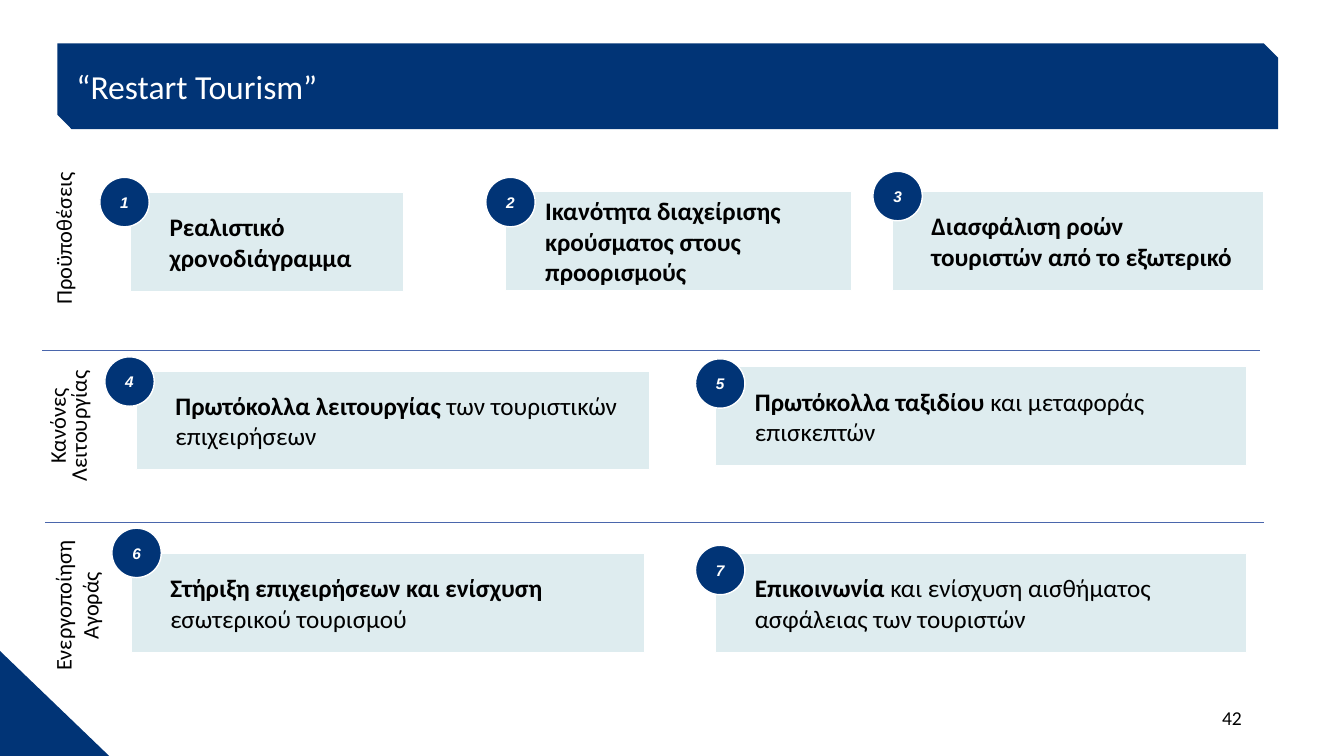
import pptx
import pptx.util
import pptx.dml.color
import pptx.enum.shapes
import pptx.enum.text
import pptx.oxml.ns
import lxml.etree

Pt = pptx.util.Pt
hue = pptx.dml.color.RGBColor.from_string
Kind = pptx.enum.shapes.MSO_SHAPE
Align = pptx.enum.text.PP_ALIGN
Mid = pptx.enum.text.MSO_ANCHOR.MIDDLE
qn = pptx.oxml.ns.qn
NAVY, PALE, WHITE, BLACK, BLUE = "013476", "DEECEF", "FFFFFF", "000000", "4A66AC"

deck = pptx.Presentation()
deck.slide_width, deck.slide_height = Pt(960), Pt(540)
slide = deck.slides.add_slide(deck.slide_layouts[6])
shapes = slide.shapes


def draw(kind, box, fill, edge=0):
    shape = shapes.add_shape(kind, *map(Pt, box))
    shape.shadow.inherit = False
    shape.fill.solid()
    shape.fill.fore_color.rgb = hue(fill)
    if edge:
        shape.line.color.rgb = hue(WHITE)
        shape.line.width = Pt(edge)
    else:
        shape.line.fill.background()
    return shape


def write(shape, lines, size, shade, frame, align=Align.LEFT, name="Calibri", italic=False):
    text = shape.text_frame
    for key, value in frame.items():
        setattr(text, key, value)
    for num, runs in enumerate(lines):
        para = text.add_paragraph() if num else text.paragraphs[0]
        para.alignment = align
        for words, bold in runs:
            run = para.add_run()
            run.text = words
            style = {"size": Pt(size), "name": name, "bold": bold, "italic": italic}
            for key, value in style.items():
                setattr(run.font, key, value)
            run.font.color.rgb = hue(shade)
    return text


# Corner and title bar
draw(Kind.RIGHT_TRIANGLE, (0, 465, 78, 75), NAVY)
bar = draw(Kind.SNIP_2_DIAG_RECTANGLE, (41, 31, 872, 61.2), NAVY)
write(bar, [[("“Restart Tourism”", False)]], 24, WHITE, {
    "word_wrap": True, "vertical_anchor": Mid,
    "margin_left": Pt(8.6), "margin_right": Pt(8.6),
    "margin_top": Pt(1.4), "margin_bottom": Pt(1.4)})

# Numbered cards: left, top, width, disc left, disc top, bold text, plain text
cards = [
    (93, 137.5, 195, 71.3, 126.7, "Ρεαλιστικό χρονοδιάγραμμα", ""),
    (361.4, 136.8, 247, 347, 126.7,
     "Ικανότητα διαχείρισης κρούσματος στους προορισμούς", ""),
    (637.2, 136.8, 265.7, 623.5, 122.4,
     "Διασφάλιση ροών τουριστών από το εξωτερικό", ""),
    (97.2, 265, 366.5, 74.9, 254.9,
     "Πρωτόκολλα λειτουργίας ", "των τουριστικών επιχειρήσεων"),
    (511.2, 262.1, 379.4, 496.8, 256.3,
     "Πρωτόκολλα ταξιδίου ", "και μεταφοράς επισκεπτών"),
    (93.6, 395.3, 366.5, 79.9, 377.3,
     "Στήριξη επιχειρήσεων και ενίσχυση ", "εσωτερικού τουρισμού"),
    (511.2, 395.3, 379.4, 496.8, 389.5,
     "Επικοινωνία ", "και ενίσχυση αισθήματος ασφάλειας των τουριστών"),
]
for num, (left, top, width, x, y, strong, plain) in enumerate(cards, 1):
    card = draw(Kind.RECTANGLE, (left, top, width, 70.6), PALE, 0.75)
    runs = [(strong, True)] + ([(plain, False)] if plain else [])
    text = write(card, [runs], 18, BLACK, {
        "word_wrap": True, "vertical_anchor": Mid,
        "margin_left": Pt(6.5), "margin_right": Pt(5.8 if num == 1 else 18.7),
        "margin_top": Pt(6.5), "margin_bottom": Pt(6.5)})
    props = text.paragraphs[0]._p.get_or_add_pPr()
    props.set("marL", str(Pt(21.6)))
    props.set("indent", "0")
    disc = draw(Kind.OVAL, (x, y, 35.3, 35.3), NAVY, 1)
    write(disc, [[(str(num), True)]], 11, WHITE, {
        "word_wrap": False, "vertical_anchor": Mid, "margin_left": 0,
        "margin_right": 0, "margin_top": 0, "margin_bottom": 0},
        Align.CENTER, "Arial", True)

# Row labels, turned upright: box, lines, wrap, line spacing
labels = [
    ((-10, 157, 110.2, 26.6), ["Προϋποθέσεις"], False, None),
    ((3.6, 285.1, 94.3, 38.2), ["Κανόνες", "Λειτουργίας"], False, Pt(15)),
    ((-2.2, 409.7, 113.8, 46.1), ["Ενεργοποίηση Αγοράς"], True, None),
]
for box, lines, wrap, space in labels:
    label = shapes.add_textbox(*map(Pt, box))
    label.rotation = 270
    text = write(label, [[(line, False)] for line in lines], 16, BLACK,
                 {"word_wrap": wrap}, Align.CENTER)
    for para in text.paragraphs:
        para.line_spacing = space

# Lines between rows
for left, right, y in [(30.2, 900, 250.6), (32.4, 902.9, 373)]:
    rule = shapes.add_connector(pptx.enum.shapes.MSO_CONNECTOR.STRAIGHT,
                                Pt(left), Pt(y), Pt(right), Pt(y))
    rule.line.color.rgb = hue(BLUE)
    rule.line.width = Pt(0.5)
    lxml.etree.SubElement(rule._element.spPr, qn("a:effectLst"))

# Page number
page = shapes.add_textbox(Pt(678.2), Pt(500.4), Pt(216), Pt(28.8))
write(page, [[("42", False)]], 14, BLACK, {"word_wrap": True}, Align.RIGHT)

deck.save("out.pptx")
